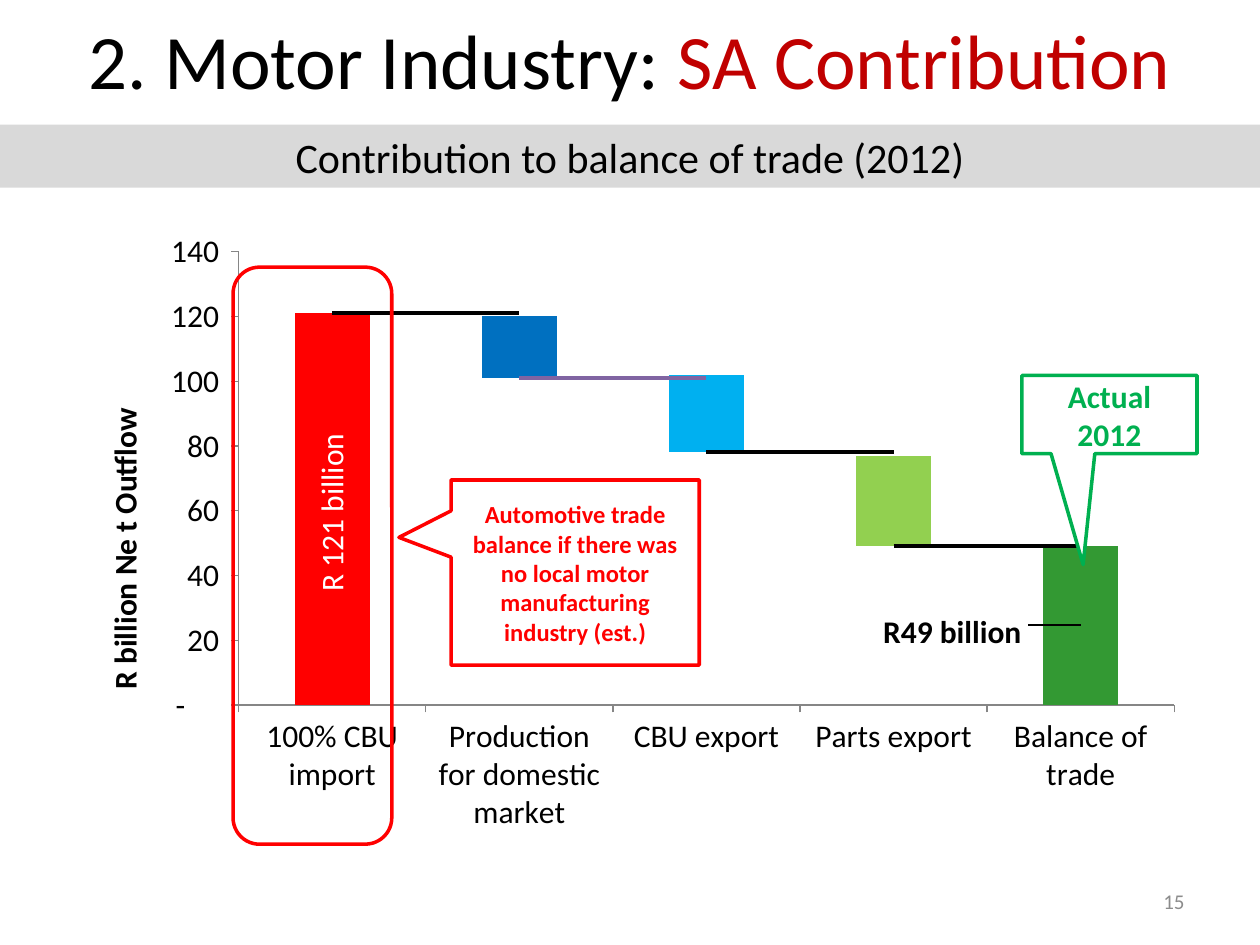
from dataclasses import dataclass

from pptx import Presentation
from pptx.chart.data import CategoryChartData
from pptx.dml.color import RGBColor
from pptx.enum.chart import XL_CHART_TYPE, XL_MARKER_STYLE, XL_TICK_MARK
from pptx.enum.shapes import MSO_CONNECTOR, MSO_SHAPE
from pptx.enum.text import MSO_ANCHOR, PP_ALIGN
from pptx.oxml import parse_xml
from pptx.oxml.ns import nsdecls, qn
from pptx.util import Inches, Pt


@dataclass(frozen=True)
class Theme:
    font: str = "Calibri"
    black: str = "000000"
    white: str = "FFFFFF"
    dark_red: str = "C00000"
    red: str = "FF0000"
    green: str = "00B050"
    band: str = "D9D9D9"
    grey: str = "8C8C8C"
    axis: str = "868686"
    purple: str = "8064A2"
    bars: tuple = ("FF0000", "0070C0", "00B0F0", "92D050", "339933")
    title: int = 44
    subtitle: int = 24
    body: int = 18
    note: int = 14
    number: int = 12
    outline: float = 2
    step_line: float = 2.25
    thin_line: float = 0.75


THEME = Theme()

CATEGORIES = ("100% CBU import", "Production for domestic market",
              "CBU export", "Parts export", "Balance of trade")
SERIES = (
    ("Series 1", (None, 101, 78, 49, None)),
    ("Series 2", (121, 19, 24, 28, 49)),
    ("Series 3", (121, 121, None, 49, 49)),
    ("Series 4", (None, 101, 101, None, None)),
    ("Series 5", (None, None, 78, 78, None)),
)
STEP_COLORS = (THEME.black, THEME.purple, THEME.black)
NUMBER_FORMAT = '_ * #,##0_ ;_ * \\-#,##0_ ;_ * "-"??_ ;_ '


def rgb(value):
    return RGBColor.from_string(value)


def style_font(font, size=THEME.body, color=THEME.black, bold=False):
    font.name, font.size, font.bold = THEME.font, Pt(size), bold
    font.color.rgb = rgb(color)


def style_line(line, color, width):
    line.color.rgb = rgb(color)
    line.width = Pt(width)


def write(tf, *parts, size=THEME.body, color=THEME.black, bold=False,
          align=PP_ALIGN.CENTER):
    """Fill one paragraph; a part is a text or a (text, color) pair."""
    p = tf.paragraphs[0]
    p.alignment = align
    for part in parts:
        text, part_color = (part, color) if isinstance(part, str) else part
        r = p.add_run()
        r.text = text
        style_font(r.font, size, part_color, bold)


def add_text(s, box, *parts, **fmt):
    tf = s.shapes.add_textbox(*map(Inches, box)).text_frame
    tf.word_wrap = True
    tf.vertical_anchor = MSO_ANCHOR.MIDDLE
    write(tf, *parts, **fmt)


def add_box(s, kind, box, text="", fill=None, line=None, adjust=(), **fmt):
    sp = s.shapes.add_shape(kind, *map(Inches, box))
    sp.shadow.inherit = False
    for i, value in enumerate(adjust):
        sp.adjustments[i] = value
    if fill:
        sp.fill.solid()
        sp.fill.fore_color.rgb = rgb(fill)
    else:
        sp.fill.background()
    if line:
        style_line(sp.line, line, THEME.outline)
    else:
        sp.line.fill.background()
    if text:
        sp.text_frame.word_wrap = True
        sp.text_frame.vertical_anchor = MSO_ANCHOR.MIDDLE
        write(sp.text_frame, text, **fmt)


def add_leader(s, ends):
    leader = s.shapes.add_connector(MSO_CONNECTOR.STRAIGHT, *map(Inches, ends))
    style_line(leader.line, THEME.black, THEME.thin_line)
    leader._element.spPr.append(parse_xml(f'<a:effectLst {nsdecls("a")}/>'))


def layout(x, y, size=None, mode="edge"):
    """Manual chart layout in fractions of the chart."""
    tags = []
    if size:
        tags.append(("layoutTarget", "inner"))
    if mode == "edge":
        tags += [("xMode", mode), ("yMode", mode)]
    tags += [("x", x), ("y", y)]
    if size:
        tags += zip("wh", size)
    body = "".join(f'<c:{tag} val="{value}"/>' for tag, value in tags)
    return parse_xml(f'<c:layout {nsdecls("c")}><c:manualLayout>{body}'
                     '</c:manualLayout></c:layout>')


def place(parent, new_layout, index):
    for old in parent.findall(qn("c:layout")):
        parent.remove(old)
    parent.insert(index, new_layout)


def move_to_lines(chart, first):
    """Turn the series from first onwards into lines on the same axes."""
    bar = chart.plots[0]._element
    moved = [series._element for series in chart.plots[0].series][first:]
    axes = "".join(f'<c:axId val="{ax.get("val")}"/>'
                   for ax in bar.findall(qn("c:axId")))
    lines = parse_xml(
        f'<c:lineChart {nsdecls("c")}><c:grouping val="standard"/>'
        f'<c:varyColors val="0"/><c:marker val="1"/>{axes}</c:lineChart>')
    for i, ser in enumerate(moved):
        for tag in ser.findall(qn("c:invertIfNegative")):
            ser.remove(tag)
        lines.insert(2 + i, ser)
    bar.addnext(lines)


def style_axes(chart):
    for axis in (chart.category_axis, chart.value_axis):
        axis.has_major_gridlines = False
        axis.major_tick_mark = XL_TICK_MARK.OUTSIDE
        axis.minor_tick_mark = XL_TICK_MARK.NONE
        style_line(axis.format.line, THEME.axis, THEME.thin_line)
        style_font(axis.tick_labels.font)
    axis = chart.value_axis
    axis.minimum_scale, axis.maximum_scale, axis.major_unit = 0, 140, 20
    axis.tick_labels.number_format = NUMBER_FORMAT
    axis.tick_labels.number_format_is_linked = False
    write(axis.axis_title.text_frame, "R billion Ne t Outflow ", bold=True)
    title = axis.axis_title._element
    title.find(".//" + qn("a:bodyPr")).set("rot", "-5400000")
    title.find(".//" + qn("a:bodyPr")).set("vert", "horz")
    place(title, layout(0.03, 0.28), 1)


def label_bars(series):
    first, last = (series.points[i].data_label for i in (0, 4))
    write(first.text_frame, "R 121 billion ", color=THEME.white)
    first.text_frame._txBody.find(qn("a:bodyPr")).set("rot", "-5400000")
    write(last.text_frame, "R49 billion ", bold=True)
    series.data_labels.show_value = False
    labels = series.data_labels._element
    place(labels.findall(qn("c:dLbl"))[-1], layout(-0.11, 0.01, mode="factor"), 1)


def add_waterfall(s, box):
    data = CategoryChartData()
    data.categories = CATEGORIES
    for name, values in SERIES:
        data.add_series(name, values)
    chart = s.shapes.add_chart(XL_CHART_TYPE.COLUMN_STACKED,
                               *map(Inches, box), data).chart
    chart.has_legend = chart.has_title = False
    style_font(chart.font)
    move_to_lines(chart, 2)
    place(chart.plots[0]._element.getparent(),
          layout(0.155, 0.05, (0.825, 0.727)), 0)
    style_axes(chart)

    columns, steps = chart.plots
    columns.gap_width, columns.overlap = 150, 100
    columns.vary_by_categories = False
    base, change = columns.series
    base.format.fill.background()
    for i, color in enumerate(THEME.bars):
        fill = change.points[i].format.fill
        fill.solid()
        fill.fore_color.rgb = rgb(color)
    label_bars(change)
    for step, color in zip(steps.series, STEP_COLORS):
        step.smooth = False
        step.marker.style = XL_MARKER_STYLE.NONE
        style_line(step.format.line, color, THEME.step_line)


def main():
    prs = Presentation()
    prs.slide_width, prs.slide_height = Inches(10), Inches(7.5)
    s = prs.slides.add_slide(prs.slide_layouts[6])
    add_waterfall(s, (0.5, 1.75, 9, 4.95))
    add_leader(s, (8.16, 4.96, 8.58, 4.96))
    add_text(s, (0, 0, 10, 0.94), "2. Motor Industry: ",
             ("SA Contribution", THEME.dark_red), size=THEME.title)
    add_box(s, MSO_SHAPE.RECTANGLE, (0, 0.99, 10, 0.5),
            "Contribution to balance of trade (2012)",
            fill=THEME.band, size=THEME.subtitle)
    add_box(s, MSO_SHAPE.ROUNDED_RECTANGLE, (1.85, 2.12, 1.26, 4.58), line=THEME.red)
    add_box(s, MSO_SHAPE.RECTANGULAR_CALLOUT, (3.58, 3.81, 1.97, 1.47),
            "Automotive trade balance if there was no local motor "
            "manufacturing industry (est.)", fill=THEME.white, line=THEME.red,
            adjust=(-0.71, -0.19), size=THEME.note, color=THEME.red, bold=True)
    add_box(s, MSO_SHAPE.RECTANGULAR_CALLOUT, (8.11, 2.98, 1.39, 0.62),
            "Actual 2012", fill=THEME.white, line=THEME.green,
            adjust=(-0.15, 1.92), color=THEME.green, bold=True)
    add_text(s, (7.17, 6.95, 2.33, 0.4), "15", size=THEME.number,
             color=THEME.grey, align=PP_ALIGN.RIGHT)
    prs.save("out.pptx")


if __name__ == "__main__":
    main()
